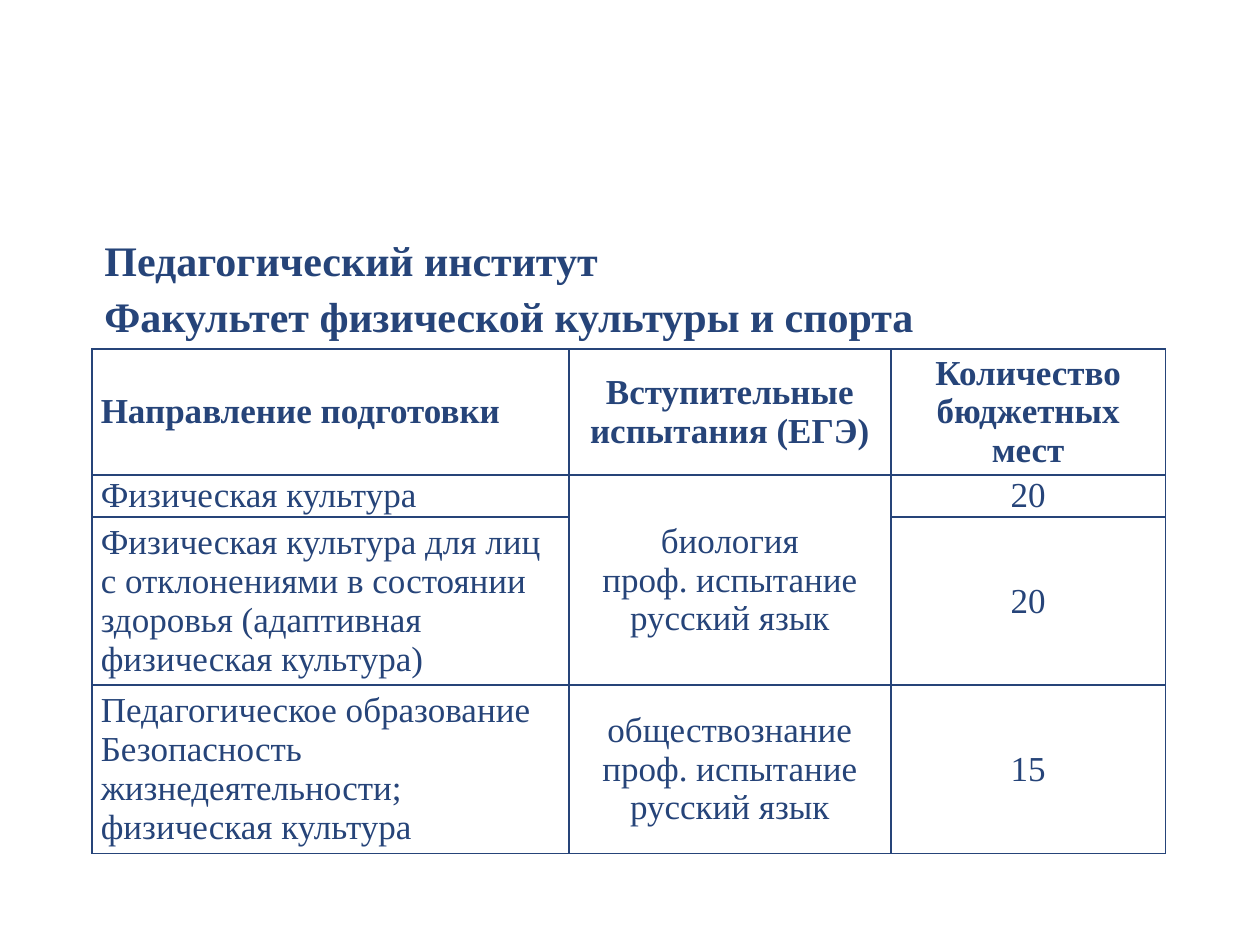
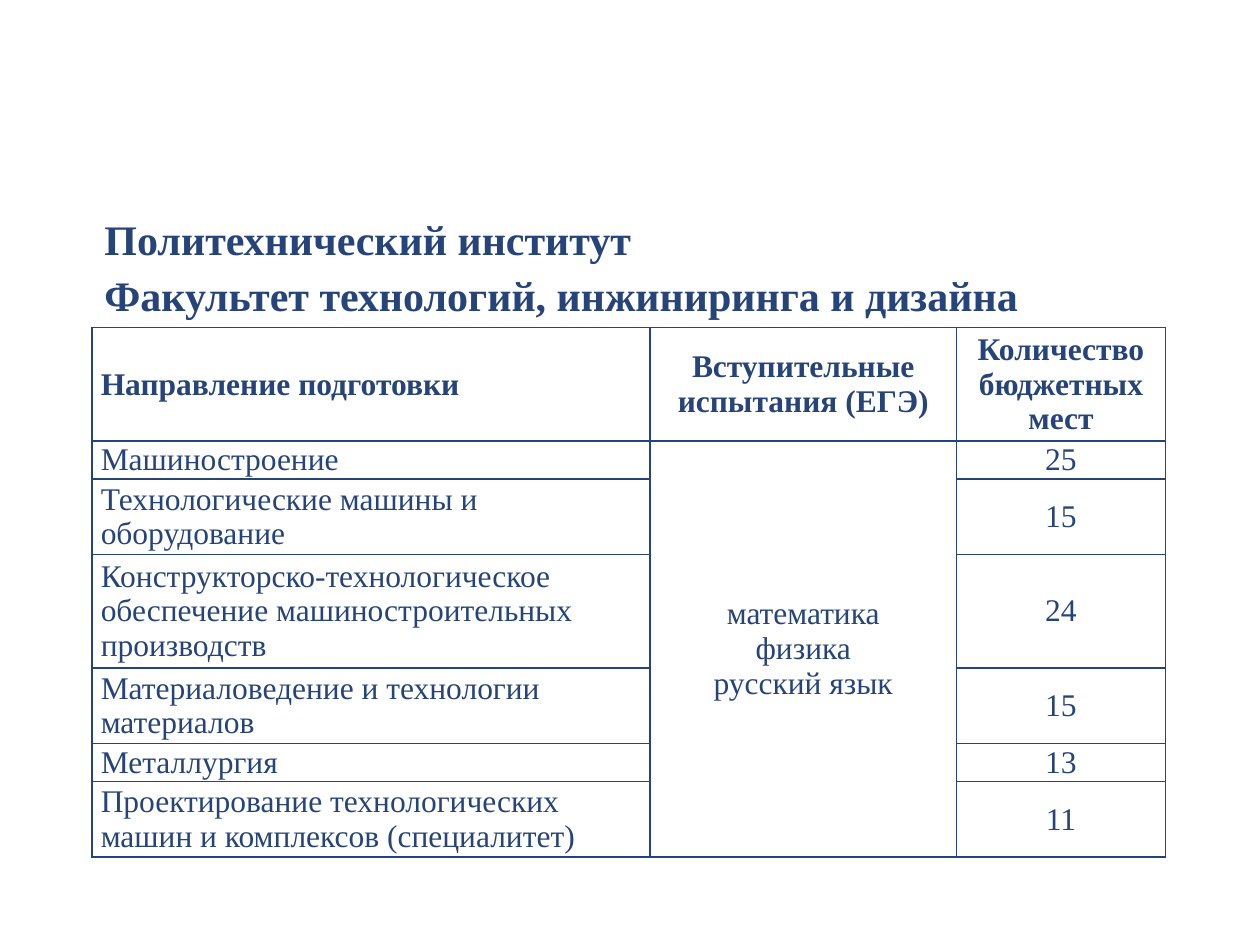
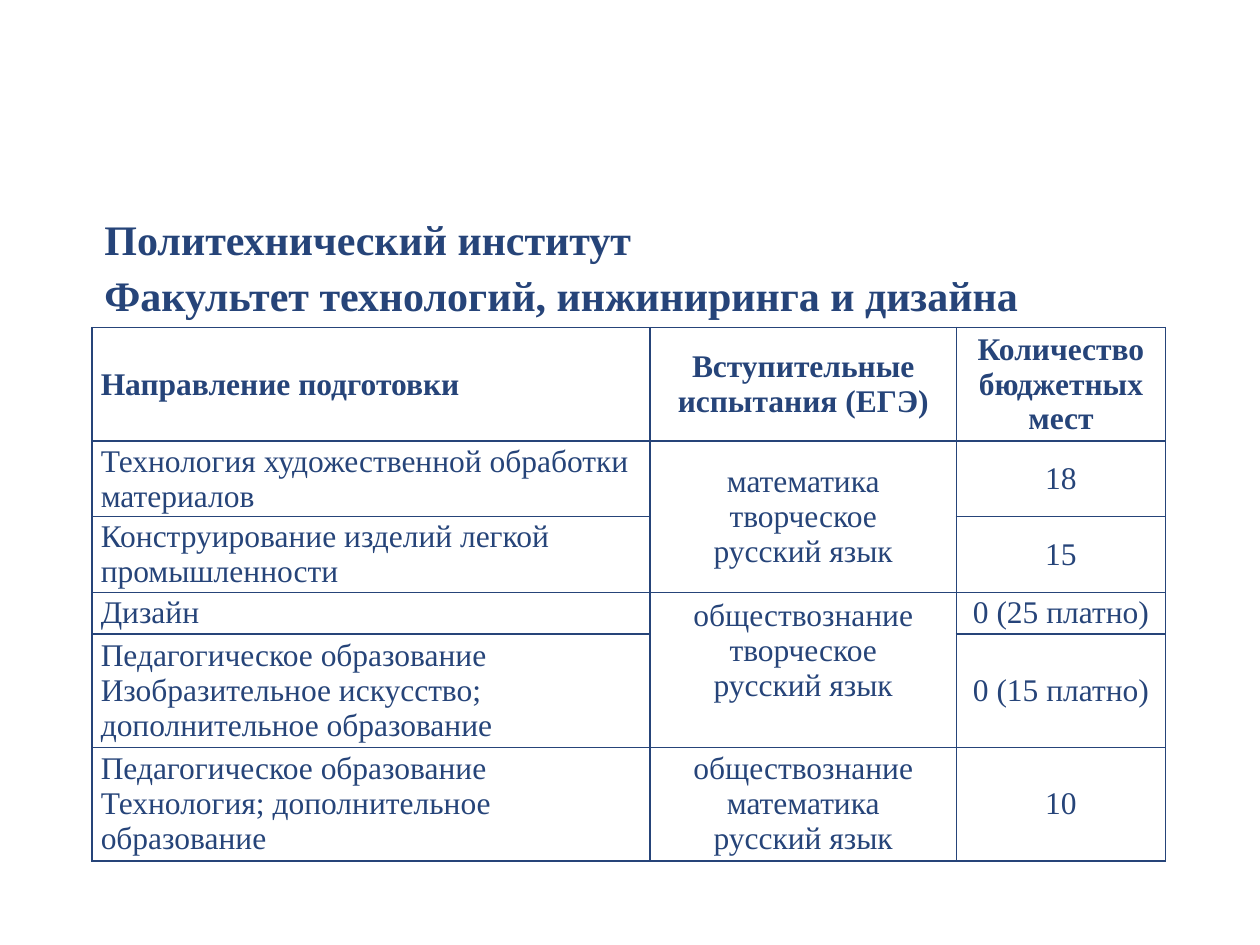
from dataclasses import dataclass
from itertools import accumulate

from lxml.etree import SubElement
from pptx import Presentation
from pptx.dml.color import RGBColor as Rgb
from pptx.enum.text import MSO_ANCHOR as Anchor, PP_ALIGN as Align
from pptx.oxml.ns import qn
from pptx.util import Pt


@dataclass(frozen=True)
class Theme:
    ink: str = "264479"
    paper: str = "FFFFFF"
    font: str = "Times New Roman"
    heading_size: float = 24
    heading_spacing: float = 32
    heading_height: float = 72
    line_ratio: float = 1.2
    rule_width: float = 1
    cell_inset: float = 5.04
    left: float = 52.56


THEME = Theme()
HEADER = ("Направление подготовки", "Вступительные испытания (ЕГЭ)", "Количество бюджетных мест")


@dataclass(frozen=True)
class Program:
    name: str
    places: str
    lines: float


@dataclass(frozen=True)
class ExamGroup:
    exams: str
    programs: tuple
    lift_lines: int = 0


@dataclass(frozen=True)
class Faculty:
    heading: str
    top: float
    heading_width: float
    columns: tuple
    text_size: float
    groups: tuple


POLYTECHNIC = dict(
    heading="Политехнический институт\nФакультет технологий, инжиниринга и дизайна",
    top=115.2,
    heading_width=653.76,
    columns=(319, 175, 119.5),
    text_size=18,
)

FACULTIES = (
    Faculty(
        heading="Педагогический институт\nФакультет физической культуры и спорта",
        top=127.4,
        heading_width=481.7,
        columns=(272.5, 184, 157),
        text_size=20,
        groups=(
            ExamGroup("биология\nпроф. испытание\nрусский язык", (
                Program("Физическая культура", "20", 1),
                Program("Физическая культура для лиц с отклонениями в состоянии здоровья "
                        "(адаптивная физическая культура)", "20", 4),
            )),
            ExamGroup("обществознание\nпроф. испытание\nрусский язык", (
                Program("Педагогическое образование\n"
                        "Безопасность жизнедеятельности; физическая культура", "15", 4),
            )),
        ),
    ),
    Faculty(
        **POLYTECHNIC,
        groups=(
            ExamGroup("математика\nфизика\nрусский язык", (
                Program("Машиностроение", "25", 1),
                Program("Технологические машины и оборудование", "15", 2),
                Program("Конструкторско-технологическое обеспечение "
                        "машиностроительных производств", "24", 3),
                Program("Материаловедение и технологии материалов", "15", 2),
                Program("Металлургия", "13", 1),
                Program("Проектирование технологических машин и комплексов (специалитет)", "11", 2),
            )),
        ),
    ),
    Faculty(
        **POLYTECHNIC,
        groups=(
            ExamGroup("математика\nтворческое\nрусский язык", (
                Program("Технология художественной обработки материалов", "18", 2),
                Program("Конструирование изделий легкой промышленности", "15", 2),
            )),
            ExamGroup("обществознание\nтворческое\nрусский язык", (
                Program("Дизайн", "0 (25 платно)", 1.1),
                Program("Педагогическое образование\n"
                        "Изобразительное искусство; дополнительное образование", "0 (15 платно)", 3),
            ), lift_lines=1),
            ExamGroup("обществознание\nматематика\nрусский язык", (
                Program("Педагогическое образование\n"
                        "Технология; дополнительное образование", "10", 3),
            )),
        ),
    ),
)


def style_paragraph(paragraph, size, bold, align=Align.LEFT):
    paragraph.alignment = align
    font = paragraph.font
    font.name, font.size, font.bold = THEME.font, Pt(size), bold
    font.color.rgb = Rgb.from_string(THEME.ink)


def add_heading(slide, text, left, top, width):
    heading = slide.shapes.add_textbox(Pt(left), Pt(top), Pt(width), Pt(THEME.heading_height))
    frame = heading.text_frame
    frame.word_wrap = True
    frame.text = text
    for paragraph in frame.paragraphs:
        style_paragraph(paragraph, THEME.heading_size, True)
        paragraph.line_spacing = Pt(THEME.heading_spacing)


def rule_cell(cell):
    properties = cell._tc.get_or_add_tcPr()
    for position, side in enumerate(("a:lnL", "a:lnR", "a:lnT", "a:lnB")):
        rule = SubElement(properties, qn(side), w=str(Pt(THEME.rule_width)))
        fill = SubElement(rule, qn("a:solidFill"))
        SubElement(fill, qn("a:srgbClr"), val=THEME.ink)
        properties.insert(position, rule)


def style_cell(cell, size, bold, align):
    cell.fill.solid()
    cell.fill.fore_color.rgb = Rgb.from_string(THEME.paper)
    rule_cell(cell)
    cell.vertical_anchor = Anchor.MIDDLE
    cell.margin_left = cell.margin_right = Pt(THEME.cell_inset)
    cell.margin_top = cell.margin_bottom = 0
    for paragraph in cell.text_frame.paragraphs:
        style_paragraph(paragraph, size, bold, align)


def add_admission_table(slide, faculty, left, top):
    line_height = faculty.text_size * THEME.line_ratio
    rows, heights = [HEADER], [3 * line_height]
    for group in faculty.groups:
        for index, program in enumerate(group.programs):
            rows.append((program.name, "" if index else group.exams, program.places))
            heights.append(program.lines * line_height)

    table = slide.shapes.add_table(
        len(rows), len(HEADER), Pt(left), Pt(top), Pt(sum(faculty.columns)), Pt(sum(heights))
    ).table
    for column, width in zip(table.columns, faculty.columns):
        column.width = Pt(width)
    for row, height, texts in zip(table.rows, heights, rows):
        row.height = Pt(height)
        for index, (cell, text) in enumerate(zip(row.cells, texts)):
            cell.text = text
            style_cell(cell, faculty.text_size, texts is HEADER, Align.CENTER if index else Align.LEFT)

    sizes = [len(group.programs) for group in faculty.groups]
    for group, size, end in zip(faculty.groups, sizes, accumulate(sizes)):
        exams = table.cell(end - size + 1, 1)
        exams.margin_bottom = Pt(group.lift_lines * line_height)
        if size > 1:
            exams.merge(table.cell(end, 1))


def add_faculty_slide(deck, faculty):
    slide = deck.slides.add_slide(deck.slide_layouts[6])
    add_heading(slide, faculty.heading, THEME.left, faculty.top, faculty.heading_width)
    add_admission_table(slide, faculty, THEME.left, faculty.top + THEME.heading_height)


def main():
    deck = Presentation()
    deck.slide_width, deck.slide_height = Pt(720), Pt(540)
    for faculty in FACULTIES:
        add_faculty_slide(deck, faculty)
    deck.save("out.pptx")


if __name__ == "__main__":
    main()
